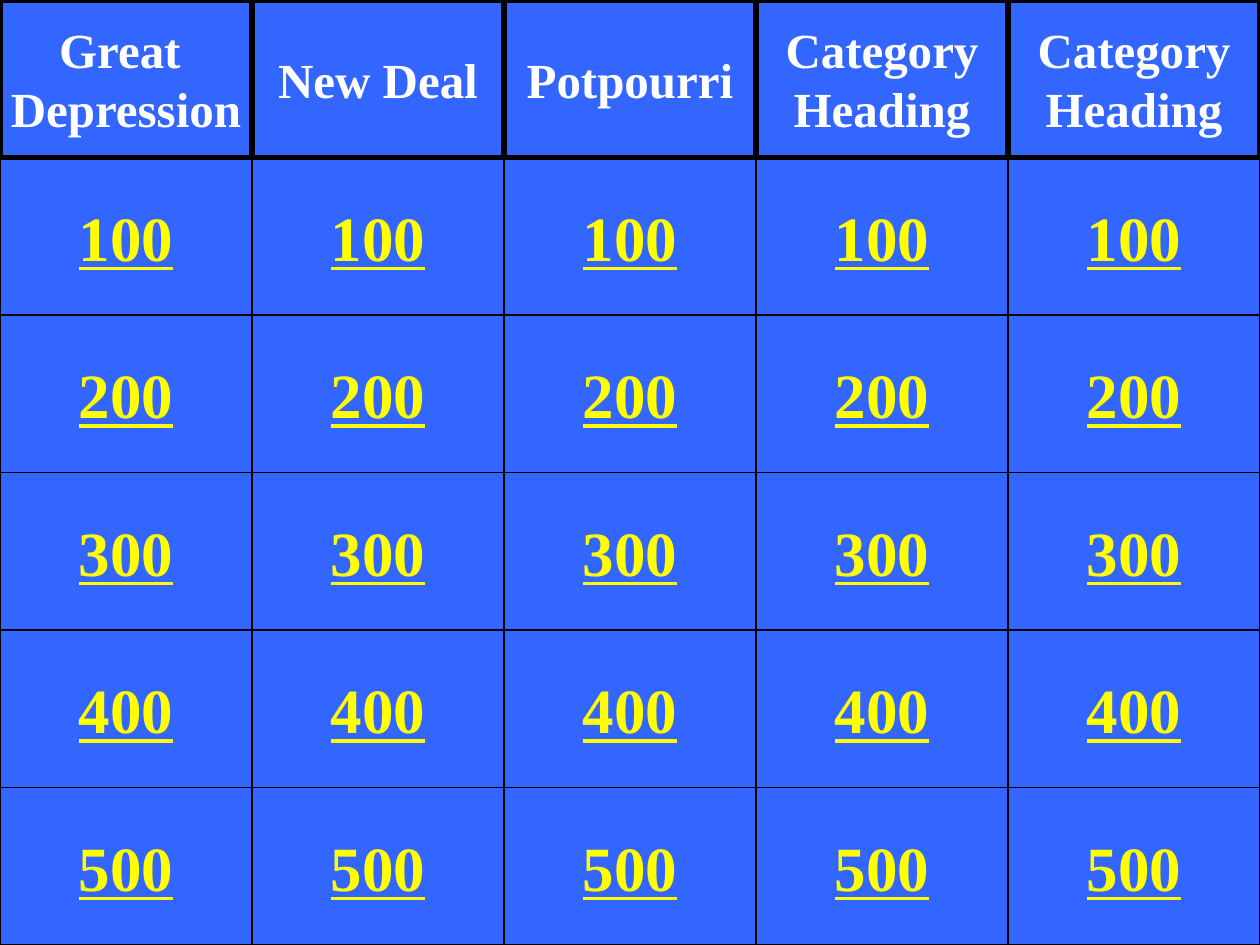
from pptx import Presentation
from pptx.dml.color import RGBColor
from pptx.enum.shapes import MSO_SHAPE
from pptx.enum.text import MSO_ANCHOR, PP_ALIGN
from pptx.util import Inches, Pt

BLUE = RGBColor(0x33, 0x66, 0xFF)
BLACK = RGBColor(0x00, 0x00, 0x00)
YELLOW = RGBColor(0xFF, 0xFF, 0x00)
WHITE = RGBColor(0xFF, 0xFF, 0xFF)
FONT = "Times New Roman"

RECTANGLE = MSO_SHAPE.RECTANGLE
BUTTON = MSO_SHAPE.ACTION_BUTTON_CUSTOM
MIDDLE = MSO_ANCHOR.MIDDLE
CENTER = PP_ALIGN.CENTER

TILE_WIDTH = 2
TILE_HEIGHT = 1.25
CATEGORIES = [
    "Great \nDepression",
    "New Deal",
    "Potpourri",
    "Category\nHeading",
    "Category\nHeading",
]
POINT_VALUES = [100, 200, 300, 400, 500]

deck = Presentation()
deck.slide_width = Inches(10)
deck.slide_height = Inches(7.5)
page = deck.slides.add_slide(deck.slide_layouts[6])
page.background.fill.solid()
page.background.fill.fore_color.rgb = BLUE


def add_tile(text, column, row, *, shape, border, size, color, underline=False):
    """Place one tile of the game board; each line of text is a paragraph."""
    tile = page.shapes.add_shape(
        shape,
        Inches(column * TILE_WIDTH), Inches(row * TILE_HEIGHT),
        Inches(TILE_WIDTH), Inches(TILE_HEIGHT),
    )
    tile.shadow.inherit = False
    tile.fill.solid()
    tile.fill.fore_color.rgb = BLUE
    tile.line.color.rgb = BLACK
    tile.line.width = Pt(border)

    frame = tile.text_frame
    frame.word_wrap = False
    frame.vertical_anchor = MIDDLE
    frame.text = text
    for para in frame.paragraphs:
        para.alignment = CENTER
        for span in para.runs:
            span.font.name = FONT
            span.font.size = Pt(size)
            span.font.bold = True
            span.font.underline = underline
            span.font.color.rgb = color


for column in range(len(CATEGORIES)):
    for row, points in enumerate(POINT_VALUES, start=1):
        add_tile(str(points), column, row, shape=BUTTON, border=0.75,
                 size=36, color=YELLOW, underline=True)

for column, category in enumerate(CATEGORIES):
    add_tile(category, column, 0, shape=RECTANGLE, border=3, size=28, color=WHITE)

deck.save("out.pptx")
